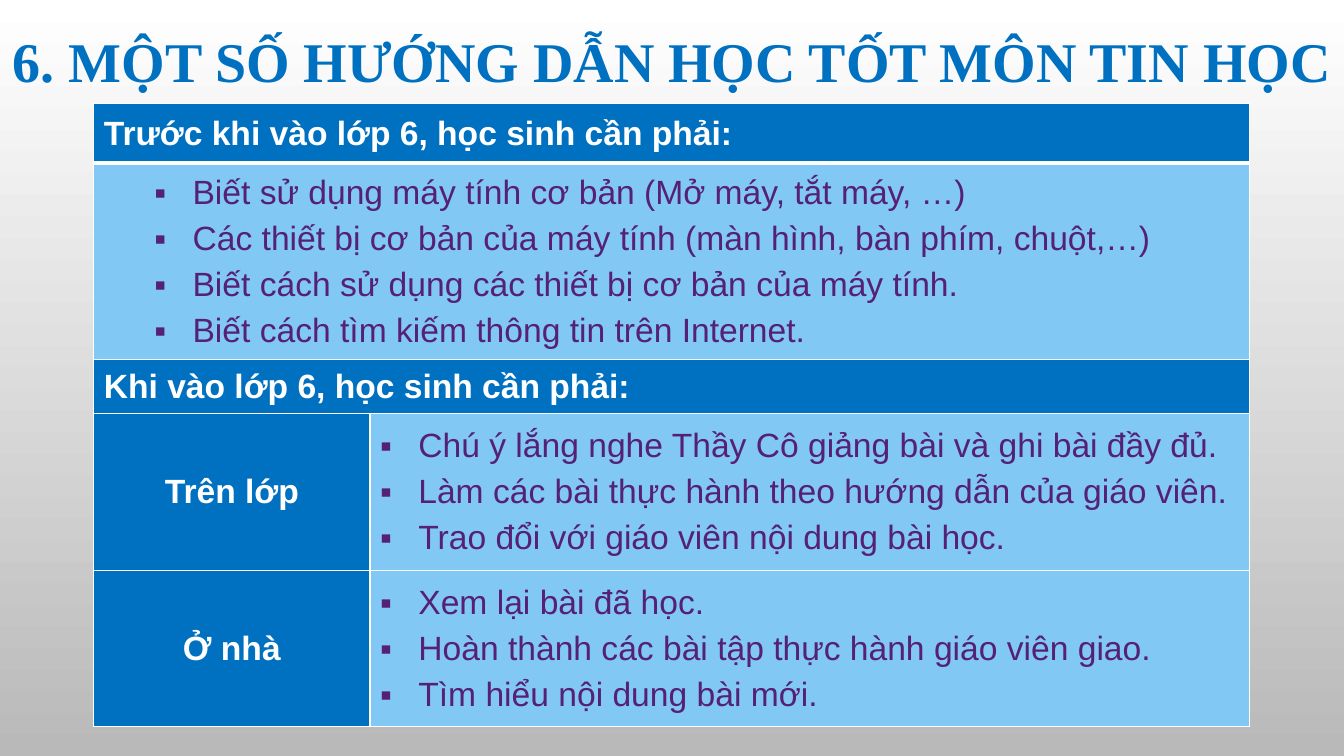
from lxml import etree
from pptx import Presentation
from pptx.dml.color import RGBColor
from pptx.enum.text import MSO_ANCHOR, PP_ALIGN
from pptx.oxml import parse_xml
from pptx.oxml.ns import qn
from pptx.util import Inches, Pt

LEFT, CENTER, JUSTIFY = PP_ALIGN.LEFT, PP_ALIGN.CENTER, PP_ALIGN.JUSTIFY
MIDDLE = MSO_ANCHOR.MIDDLE
BLUE, SKY, PURPLE, WHITE, GRAY = "0070C0", "82C8F5", "542176", "FFFFFF", "B9B9B9"
NAMESPACE = "http://schemas.openxmlformats.org/drawingml/2006/main"


def paint(color_format, code):
    color_format.rgb = RGBColor.from_string(code)


def write(para, text, color, **style):
    span = para.add_run()
    span.text = text
    for name, value in style.items():
        setattr(span.font, name, value)
    paint(span.font.color, color)


deck = Presentation()
deck.slide_width, deck.slide_height = Inches(13.33), Inches(7.5)
page = deck.slides.add_slide(deck.slide_layouts[6])

backdrop = page.background.fill
backdrop.gradient()
backdrop.gradient_angle = 270
for stop, position, code in zip(backdrop.gradient_stops, (0, 1), (WHITE, GRAY)):
    stop.position = position
    paint(stop.color, code)

box = page.shapes.add_textbox(0, Inches(0.21), deck.slide_width, Inches(1.11))
box.text_frame.word_wrap = True
title = box.text_frame.paragraphs[0]
title.alignment = CENTER
write(title, "6. MỘT SỐ HƯỚNG DẪN HỌC TỐT MÔN TIN HỌC", BLUE,
      name="Times New Roman", size=Pt(40), bold=True)

columns = [2.74, 8.72]
rows = [0.59, 1.95, 0.53, 1.56, 1.55]
frame = page.shapes.add_table(len(rows), len(columns), Inches(0.93), Inches(1.03),
                              Inches(sum(columns)), Inches(sum(rows)))
table = frame.table
table.horz_banding = False
for column, width in zip(table.columns, columns):
    column.width = Inches(width)
for row, height in zip(table.rows, rows):
    row.height = Inches(height)
for row in range(3):
    table.cell(row, 0).merge(table.cell(row, 1))

headings = [
    (0, LEFT, "Trước khi vào lớp 6, học sinh cần phải:"),
    (2, JUSTIFY, "Khi vào lớp 6, học sinh cần phải:"),
    (3, CENTER, "Trên lớp"),
    (4, CENTER, "Ở nhà"),
]
lists = [
    (1, 0, 0.88, [
        "Biết sử dụng máy tính cơ bản (Mở máy, tắt máy, …)",
        "Các thiết bị cơ bản của máy tính (màn hình, bàn phím, chuột,…)",
        "Biết cách sử dụng các thiết bị cơ bản của máy tính.",
        "Biết cách tìm kiếm thông tin trên Internet.",
    ]),
    (3, 1, 0.38, [
        "Chú ý lắng nghe Thầy Cô giảng bài và ghi bài đầy đủ.",
        "Làm các bài thực hành theo hướng dẫn của giáo viên.",
        "Trao đổi với giáo viên nội dung bài học.",
    ]),
    (4, 1, 0.38, [
        "Xem lại bài đã học.",
        "Hoàn thành các bài tập thực hành giáo viên giao.",
        "Tìm hiểu nội dung bài mới.",
    ]),
]

for row, alignment, text in headings:
    para = table.cell(row, 0).text_frame.paragraphs[0]
    para.alignment = alignment
    para.space_after = Pt(3)
    write(para, text, WHITE, name="Arial", size=Pt(24), bold=True)

for row, column, indent, items in lists:
    text_frame = table.cell(row, column).text_frame
    for index, item in enumerate(items):
        para = text_frame.add_paragraph() if index else text_frame.paragraphs[0]
        properties = para._p.get_or_add_pPr()
        properties.set("marL", str(Inches(indent)))
        properties.set("indent", str(Inches(-0.38)))
        etree.SubElement(properties, qn("a:buFont")).set("typeface", "Arial")
        etree.SubElement(properties, qn("a:buChar")).set("char", "▪")
        para.level = 0 if column else 1
        para.alignment = LEFT if row == 4 or index == 2 and column else JUSTIFY
        para.space_before = Pt(3 if index else 0)
        para.space_after = Pt(3)
        write(para, item, PURPLE, name="Arial", size=Pt(24), bold=False)

list_cells = {(row, column) for row, column, indent, items in lists} | {(1, 1)}
for row in range(len(rows)):
    for column in range(len(columns)):
        cell = table.cell(row, column)
        cell.vertical_anchor = MIDDLE
        cell.fill.solid()
        paint(cell.fill.fore_color, SKY if (row, column) in list_cells else BLUE)
        for index, side in enumerate("LRTB"):
            weight = 3 if (row, side) in ((0, "B"), (1, "T")) else 1
            border = parse_xml(
                f'<a:ln{side} xmlns:a="{NAMESPACE}" w="{Pt(weight)}"><a:solidFill>'
                f'<a:srgbClr val="{WHITE}"/></a:solidFill></a:ln{side}>')
            cell._tc.get_or_add_tcPr().insert(index, border)

deck.save("out.pptx")
